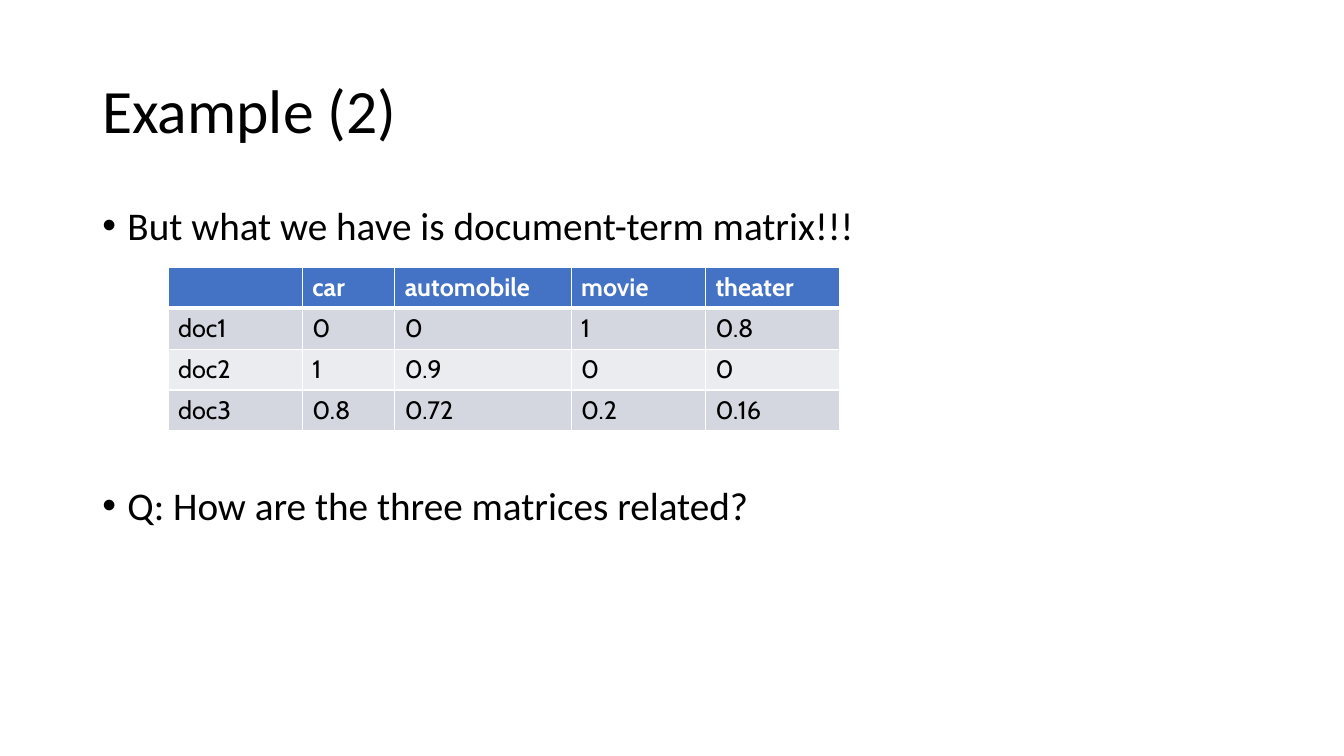
from lxml import etree
from pptx import Presentation
from pptx.dml.color import RGBColor
from pptx.enum.text import MSO_ANCHOR
from pptx.oxml.ns import qn
from pptx.util import Pt

MIDDLE, TOP = MSO_ANCHOR.MIDDLE, MSO_ANCHOR.TOP
BLACK, WHITE, BLUE = "000000", "FFFFFF", "4472C4"
BANDS = ("D5D7E0", "EBECF0")
COLUMN_WIDTHS = (96, 66, 126, 96, 96)
ROW_HEIGHT = 29.2
MATRIX = (
    ("", "car", "automobile", "movie", "theater"),
    ("doc1", "0", "0", "1", "0.8"),
    ("doc2", "1", "0.9", "0", "0"),
    ("doc3", "0.8", "0.72", "0.2", "0.16"),
)


def rgb(color):
    """Return the colour for a hex string."""
    return RGBColor.from_string(color)


def add_run(p, text, size, font, color=BLACK, bold=False):
    """Add one formatted run to a paragraph."""
    r = p.add_run()
    r.text = text
    r.font.size = Pt(size)
    r.font.name = font
    r.font.bold = bold
    r.font.color.rgb = rgb(color)


def add_text_box(s, left, top, width, height, anchor):
    """Add a wrapping text box and return its text frame."""
    tf = s.shapes.add_textbox(Pt(left), Pt(top), Pt(width), Pt(height)).text_frame
    tf.word_wrap = True
    tf.vertical_anchor = anchor
    return tf


def add_title(s, text):
    """Add the slide title."""
    p = add_text_box(s, 66, 28.75, 828, 104.4, MIDDLE).paragraphs[0]
    p.line_spacing = 0.9
    add_run(p, text, 44, "Calibri")


def add_bullets(s, items):
    """Add bulleted paragraphs from pairs of text and space before."""
    tf = add_text_box(s, 66, 143.75, 828, 342.6, TOP)
    for i, (text, space) in enumerate(items):
        p = tf.add_paragraph() if i else tf.paragraphs[0]
        p.line_spacing = 0.9
        p.space_before = Pt(space)
        pPr = p._p.get_or_add_pPr()
        pPr.set("marL", str(Pt(18)))
        pPr.set("indent", str(-Pt(18)))
        etree.SubElement(pPr, qn("a:buFont"), typeface="Arial")
        etree.SubElement(pPr, qn("a:buChar"), char="•")
        add_run(p, text, 28, "Calibri")


def set_borders(cell, color, **widths):
    """Set the border widths of a cell by side: L, R, T, B."""
    tcPr = cell._tc.get_or_add_tcPr()
    for side, width in widths.items():
        ln = etree.SubElement(tcPr, qn(f"a:ln{side}"), w=str(Pt(width)))
        fill = etree.SubElement(ln, qn("a:solidFill"))
        etree.SubElement(fill, qn("a:srgbClr"), val=color)


def add_matrix(s, left, top, rows):
    """Add the banded table with its header row."""
    frame = s.shapes.add_table(
        len(rows), len(COLUMN_WIDTHS), Pt(left), Pt(top),
        Pt(sum(COLUMN_WIDTHS)), Pt(ROW_HEIGHT * len(rows)))
    table = frame.table
    for column, width in zip(table.columns, COLUMN_WIDTHS):
        column.width = Pt(width)
    for i, row in enumerate(rows):
        table.rows[i].height = Pt(ROW_HEIGHT)
        header = i == 0
        for j, text in enumerate(row):
            cell = table.cell(i, j)
            set_borders(cell, WHITE, L=1, R=1, T=3 if i == 1 else 1, B=3 if header else 1)
            cell.fill.solid()
            cell.fill.fore_color.rgb = rgb(BLUE if header else BANDS[(i - 1) % 2])
            if text:
                add_run(cell.text_frame.paragraphs[0], text, 18, "Cabin",
                        WHITE if header else BLACK, header)


def main():
    """Build the slide and save it."""
    prs = Presentation()
    prs.slide_width, prs.slide_height = Pt(960), Pt(540)
    s = prs.slides.add_slide(prs.slide_layouts[6])
    add_title(s, "Example (2)")
    add_bullets(s, (
        ("But what we have is document-term matrix!!!", 10),
        ("Q: How are the three matrices related?", 170),
    ))
    add_matrix(s, 120, 191, MATRIX)
    prs.save("out.pptx")


if __name__ == "__main__":
    main()
